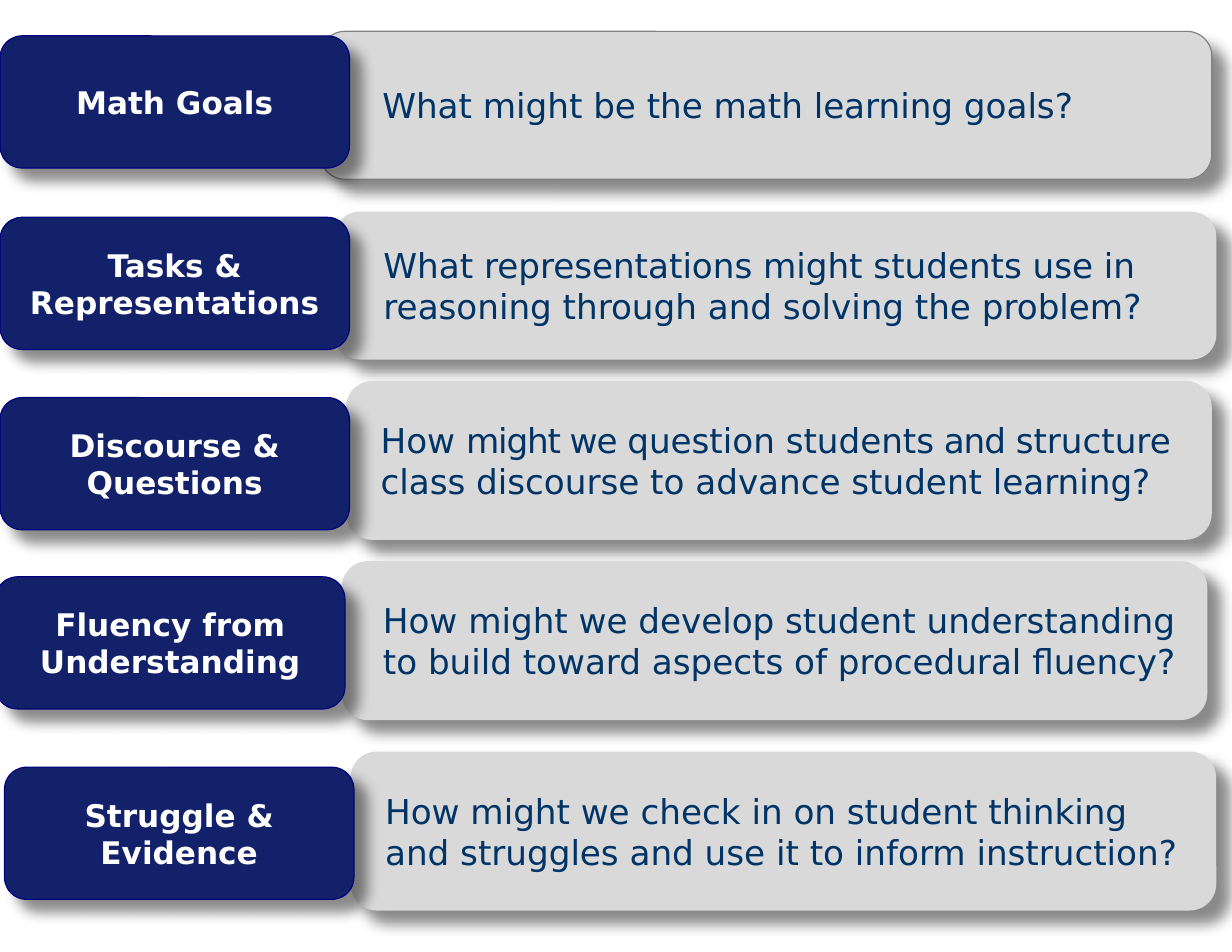
"""Build a slide of five teaching topics, each with a guiding question."""
from lxml import etree
from pptx import Presentation
from pptx.dml.color import RGBColor
from pptx.enum import shapes, text
from pptx.oxml.ns import qn
from pptx.util import Inches, Pt

FONT = "DejaVu Sans"
LABEL_SIZE = (3.12, 1.18)
ROWS = [
    ("Math Goals", (0, 0.32), (2.86, 0.28, 7.96, 1.32), 0.38, "808080",
     [("What might be the math learning goals?", 0)]),
    ("Tasks & Representations", (0, 1.94), (2.99, 1.89, 7.87, 1.32), 0.26, None,
     [("What representations might students use in reasoning through "
       "and solving the problem?", 0)]),
    ("Discourse & Questions", (0, 3.55), (3.09, 3.4, 7.73, 1.42), 0.13, None,
     [("How ", 0), ("might we ", -0.7), ("question students", 0), (" and ", -0.7),
      ("structure class discourse to advance student learning?", 0)]),
    ("Fluency from Understanding", (-0.04, 5.15), (3.05, 5.01, 7.73, 1.42), 0.19, None,
     [("How might we develop student understanding to build toward "
       "aspects of procedural fluency?", 0)]),
    ("Struggle & Evidence", (0.04, 6.85), (3.13, 6.71, 7.73, 1.42), 0.13, None,
     [("How might we check in on student thinking and struggles "
       "and use it to inform instruction?", 0)]),
]


def rgb(value):
    return RGBColor.from_string(value)


def add_shadow(sp):
    sp.shadow.inherit = False
    effects = sp._element.spPr.find(qn("a:effectLst"))
    outer = etree.SubElement(effects, qn("a:outerShdw"), blurRad=str(Pt(8.8)),
                             dist=str(Pt(11)), dir=str(45 * 60000),
                             algn="tl", rotWithShape="0")
    color = etree.SubElement(outer, qn("a:srgbClr"), val="000000")
    etree.SubElement(color, qn("a:alpha"), val="46000")


def add_box(s, box, fill, line=None):
    sp = s.shapes.add_shape(shapes.MSO_SHAPE.ROUNDED_RECTANGLE,
                            *(Inches(v) for v in box))
    sp.fill.solid()
    sp.fill.fore_color.rgb = rgb(fill)
    if line:
        sp.line.color.rgb = rgb(line)
        sp.line.width = Pt(0.75)
    else:
        sp.line.fill.background()
    add_shadow(sp)
    tf = sp.text_frame
    tf.word_wrap = True
    tf.vertical_anchor = text.MSO_ANCHOR.MIDDLE
    tf.margin_left = tf.margin_right = Inches(0.11)
    tf.margin_top = tf.margin_bottom = Inches(0.06)
    return tf.paragraphs[0]


def add_run(p, words, size, color, bold=False, spacing=0):
    r = p.add_run()
    r.text = words
    r.font.name = FONT
    r.font.size = Pt(size)
    r.font.bold = bold
    r.font.color.rgb = rgb(color)
    if spacing:
        r.font._element.set("spc", str(round(spacing * 100)))


def add_question(s, box, indent, line, runs):
    p = add_box(s, box, "D9D9D9", line)
    p.alignment = text.PP_ALIGN.LEFT
    pPr = p._p.get_or_add_pPr()
    pPr.set("marL", str(Inches(indent)))
    pPr.set("indent", "0")
    for words, spacing in runs:
        add_run(p, words, 22, "003366", spacing=spacing)


def add_label(s, corner, words):
    p = add_box(s, corner + LABEL_SIZE, "13216B", "00007D")
    p.alignment = text.PP_ALIGN.CENTER
    add_run(p, words, 20, "FFFFFF", bold=True)


def main():
    prs = Presentation()
    prs.slide_width, prs.slide_height = Inches(11), Inches(8.5)
    s = prs.slides.add_slide(prs.slide_layouts[6])
    for label, corner, box, indent, line, runs in ROWS:
        add_question(s, box, indent, line, runs)
        add_label(s, corner, label)
    prs.save("out.pptx")


if __name__ == "__main__":
    main()
